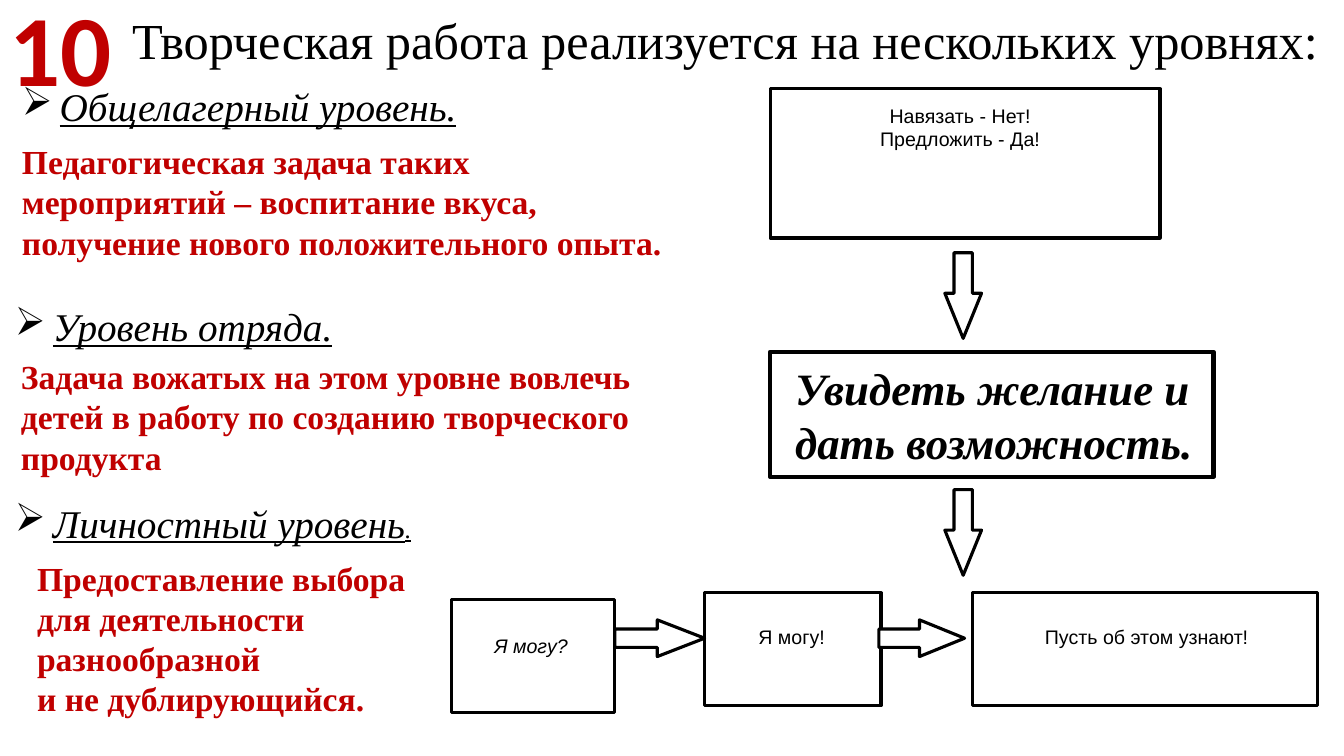
import pptx
import pptx.dml.color
import pptx.enum.shapes
import pptx.enum.text
import pptx.oxml
import pptx.oxml.ns
import pptx.util

Pt = pptx.util.Pt
Align = pptx.enum.text.PP_ALIGN
Shape = pptx.enum.shapes.MSO_SHAPE
BLACK, WHITE, RED = "000000", "FFFFFF", "C00000"
SERIF, SANS = "Times New Roman", "Arial"


def colour(value):
    return pptx.dml.color.RGBColor.from_string(value)


class LevelsSlide:
    heading = {"name": SERIF, "size": Pt(36)}
    level = {"name": SERIF, "size": Pt(28), "italic": True, "underline": True}
    task = {"name": SERIF, "size": Pt(24), "bold": True}
    motto = {"name": SERIF, "size": Pt(32), "bold": True, "italic": True}
    caption = {"name": SANS, "size": Pt(14)}
    number = {"name": "Calibri", "size": Pt(72), "bold": True}

    def __init__(self, deck):
        self.page = deck.slides.add_slide(deck.slide_layouts[5])

    def style_font(self, font, style, tint):
        for name, value in style.items():
            setattr(font, name, value)
        font.color.rgb = colour(tint)

    def fill_text(self, box, lines, style, tint, align, wrap, grow):
        frame = box.text_frame
        frame.word_wrap = wrap
        frame.vertical_anchor = pptx.enum.text.MSO_ANCHOR.TOP
        sizing = pptx.enum.text.MSO_AUTO_SIZE
        frame.auto_size = sizing.SHAPE_TO_FIT_TEXT if grow else sizing.NONE
        for index, line in enumerate(lines):
            para = frame.add_paragraph() if index else frame.paragraphs[0]
            para.alignment = align
            span = para.add_run()
            span.text = line
            self.style_font(span.font, style, tint)

    def title(self, place, text):
        box = self.page.shapes.title
        for name, value in zip(("left", "top", "width", "height"), place):
            setattr(box, name, Pt(value))
        self.fill_text(box, [text], self.heading, BLACK, Align.LEFT, False, True)

    def text(self, place, lines, style, tint=BLACK, align=Align.LEFT, wrap=False, grow=True):
        box = self.page.shapes.add_textbox(*map(Pt, place))
        self.fill_text(box, lines, style, tint, align, wrap, grow)
        return box

    def bullet(self, place, text, ending=""):
        para = self.text(place, [text], self.level).text_frame.paragraphs[0]
        properties = para._p.get_or_add_pPr()
        properties.set("marL", str(Pt(27)))
        properties.set("indent", str(Pt(-27)))
        namespace = pptx.oxml.ns.nsdecls("a")
        for element in (
            f'<a:buChar {namespace} char="➢"/>',
            f'<a:tabLst {namespace}><a:tab pos="{Pt(18)}" algn="l"/></a:tabLst>',
        ):
            properties.append(pptx.oxml.parse_xml(element))
        if ending:
            span = para.add_run()
            span.text = ending
            self.style_font(span.font, {**self.level, "size": Pt(18)}, BLACK)

    def shape(self, kind, place, weight=2.25):
        shape = self.page.shapes.add_shape(kind, *map(Pt, place))
        shape.shadow.inherit = False
        shape.line.color.rgb = colour(BLACK)
        shape.line.width = Pt(weight)
        return shape

    def frame(self, place, weight=2.25):
        self.shape(Shape.RECTANGLE, place, weight).fill.background()

    def arrow(self, left, top, length=61.2, rotation=0, head=1.23):
        arrow = self.shape(Shape.RIGHT_ARROW, (left, top, length, 26.2))
        arrow.fill.solid()
        arrow.fill.fore_color.rgb = colour(WHITE)
        arrow.adjustments[0] = 0.5
        arrow.adjustments[1] = head
        arrow.rotation = rotation


def main():
    deck = pptx.Presentation()
    deck.slide_width, deck.slide_height = Pt(960), Pt(540)
    slide = LevelsSlide(deck)

    slide.title((87.1, 2.9, 879.8, 51.1), "Творческая работа реализуется на нескольких уровнях:")

    slide.bullet((3.6, 212.4, 243.4, 41), "Уровень отряда.")
    slide.bullet((8.6, 55.4, 328.3, 41), "Общелагерный уровень.")
    slide.bullet((3.6, 352.8, 301, 41), "Личностный уровень", ".")

    for place, lines in (
        ((8.6, 97.2, 483.1, 94.3), ["Педагогическая задача таких мероприятий – воспитание вкуса, получение нового положительного опыта."]),
        ((7.9, 250.6, 453.6, 94.3), ["Задача вожатых на этом уровне вовлечь детей в работу по созданию творческого продукта"]),
        ((19.4, 394.6, 319, 123.8), ["Предоставление выбора для деятельности разнообразной", "и не дублирующийся."]),
    ):
        slide.text(place, lines, slide.task, RED, wrap=True)

    slide.text((560.9, 254.2, 311.8, 85), ["Увидеть желание и дать возможность."], slide.motto, wrap=True)
    slide.frame((550.1, 251.3, 316.8, 89.3), 3)

    italic = {**slide.caption, "italic": True}
    for frame, place, lines, style in (
        ((550.1, 63.4, 278.6, 106.6), (562.3, 70.6, 247, 93.6), ["Навязать - Нет!", "Предложить - Да!"], slide.caption),
        ((322.6, 428.4, 116.6, 80.6), (324, 449.3, 110.9, 48.2), ["Я могу?"], italic),
        ((503.3, 423.4, 126, 80.6), (509, 442.8, 113, 46.1), ["Я могу!"], slide.caption),
        ((694.8, 423.4, 246.2, 80.6), (704.2, 442.8, 229.7, 46.1), ["Пусть об этом узнают!"], slide.caption),
    ):
        slide.frame(frame)
        slide.text(place, lines, style, align=Align.CENTER, grow=False)

    slide.arrow(439.2, 442.8, 64.1, head=1.29)
    slide.arrow(627.8, 442.8)
    for top in (198, 367.2):
        slide.arrow(657.4, top, rotation=90)

    slide.text((-0.7, -13.7, 88.6, 94.3), ["10"], slide.number, RED, Align.CENTER)
    deck.save("out.pptx")


if __name__ == "__main__":
    main()
